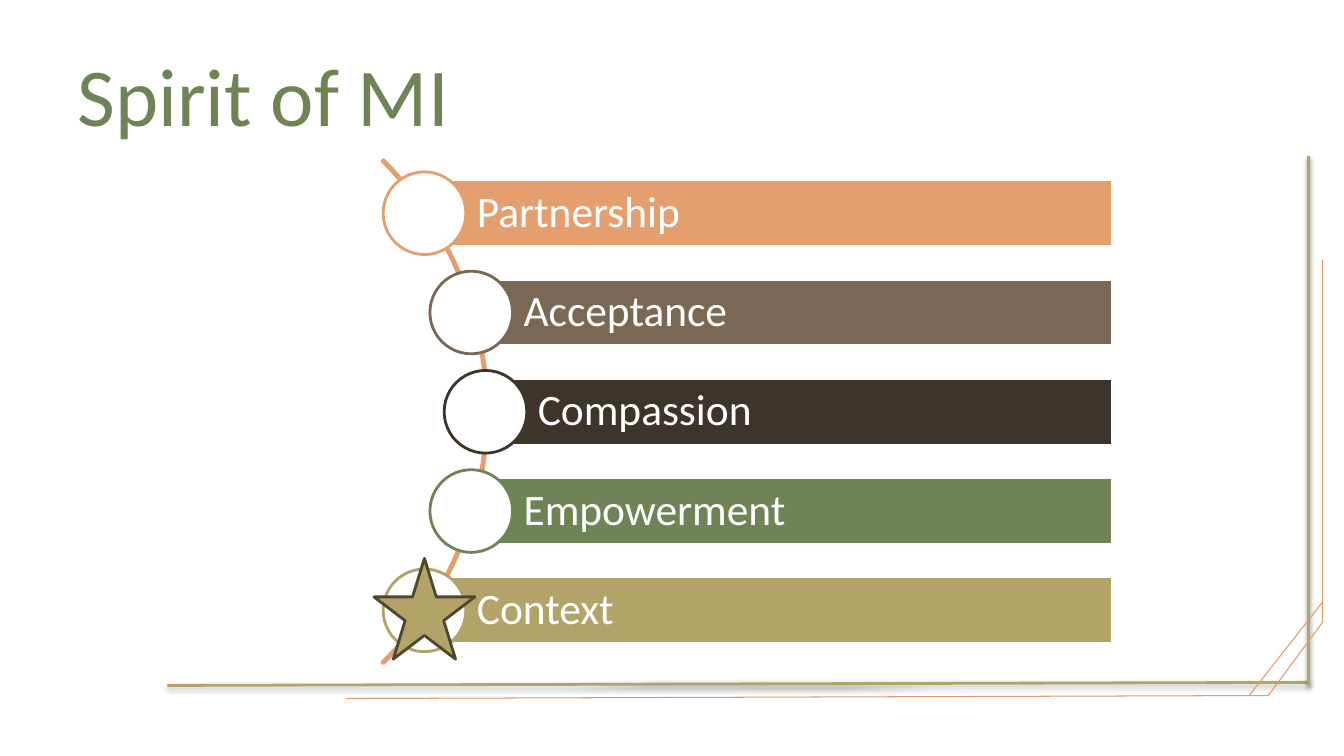
from dataclasses import dataclass
from math import sqrt

from lxml.etree import SubElement
from pptx import Presentation
from pptx.dml.color import RGBColor
from pptx.enum.shapes import MSO_CONNECTOR, MSO_SHAPE
from pptx.enum.text import MSO_ANCHOR, PP_ALIGN
from pptx.oxml.ns import qn
from pptx.util import Inches, Pt


@dataclass(frozen=True)
class Theme:
    font: str = "Calibri"
    title_size: float = 58.7
    label_size: float = 31
    outline: float = 2
    hairline: float = 0.75
    white: str = "FFFFFF"
    orange: str = "E59E6D"
    frame_orange: str = "E39A68"
    brown: str = "7A6855"
    dark: str = "3D342A"
    green: str = "6F8456"
    gold: str = "B3A369"
    star_edge: str = "4E472E"


theme = Theme()


def add_outlined(kind, left, top, width, height, fill, edge):
    shape = page.shapes.add_shape(kind, Inches(left), Inches(top), Inches(width), Inches(height))
    shape.shadow.inherit = False
    if fill:
        shape.fill.solid()
        shape.fill.fore_color.rgb = RGBColor.from_string(fill)
    else:
        shape.fill.background()
    shape.line.color.rgb = RGBColor.from_string(edge)
    shape.line.width = Pt(theme.outline)
    return shape


def add_span(para, text, size, color):
    span = para.add_run()
    span.text = text
    span.font.name = theme.font
    span.font.size = Pt(size)
    span.font.color.rgb = RGBColor.from_string(color)


deck = Presentation()
deck.slide_width = Inches(13.33)
deck.slide_height = Inches(7.5)
page = deck.slides.add_slide(deck.slide_layouts[5])

# Frame in the lower right corner: gold lines cast a shadow, orange ones do not
gold_lines = [(1.66, 6.8, 12.98, 6.77), (12.98, 1.55, 12.98, 6.8)]
orange_lines = [
    (13.12, 6.17, 12.58, 6.9),
    (13.12, 5.97, 12.39, 6.9),
    (12.58, 6.9, 3.43, 6.93),
    (13.12, 6.17, 13.12, 2.58),
]
for ends in gold_lines + orange_lines:
    is_gold = ends in gold_lines
    rule = page.shapes.add_connector(MSO_CONNECTOR.STRAIGHT, *map(Inches, ends))
    rule.line.color.rgb = RGBColor.from_string(theme.gold if is_gold else theme.frame_orange)
    rule.line.width = Pt(theme.outline if is_gold else theme.hairline)
    effects = SubElement(rule._element.spPr, qn("a:effectLst"))
    if is_gold:
        shadow = SubElement(effects, qn("a:outerShdw"), blurRad=str(Pt(3.1)),
                            dist=str(Pt(1.6)), dir="5400000", rotWithShape="0")
        shade = SubElement(shadow, qn("a:srgbClr"), val="000000")
        SubElement(shade, qn("a:alpha"), val="38000")

# Arc that carries the circles
arc_left, arc_top, arc_size = -2.23, 0.55, 7.07
arc = add_outlined(MSO_SHAPE.BLOCK_ARC, arc_left, arc_top, arc_size, arc_size, None, theme.orange)
for index, value in enumerate((189, 27, 0.003)):
    arc.adjustments[index] = value

# Each bar starts at the centre of its circle, which lies on the arc
center_x = arc_left + arc_size / 2
center_y = arc_top + arc_size / 2
track_radius = 3.51
row_pitch = 0.985
bar_right, bar_height, circle_size = 11.03, 0.66, 0.82
rows = [
    ("Partnership", theme.orange),
    ("Acceptance", theme.brown),
    ("Compassion", theme.dark),
    ("Empowerment", theme.green),
    ("Context", theme.gold),
]
for index, (label, color) in enumerate(rows):
    offset = (index - 2) * row_pitch
    x = center_x + sqrt(track_radius ** 2 - offset ** 2)
    y = center_y + offset
    bar = add_outlined(MSO_SHAPE.RECTANGLE, x, y - bar_height / 2,
                       bar_right - x, bar_height, color, theme.white)
    frame = bar.text_frame
    frame.word_wrap = True
    frame.vertical_anchor = MSO_ANCHOR.MIDDLE
    frame.margin_left = Inches(0.52)
    frame.margin_top = frame.margin_right = frame.margin_bottom = Inches(0.09)
    para = frame.paragraphs[0]
    para.alignment = PP_ALIGN.LEFT
    para.line_spacing = 0.9
    add_span(para, label, theme.label_size, theme.white)
    add_outlined(MSO_SHAPE.OVAL, x - circle_size / 2, y - circle_size / 2,
                 circle_size, circle_size, theme.white, color)

title = page.shapes.title
title.left, title.top, title.width, title.height = map(Inches, (0.67, 0.3, 12, 1.25))
title.text_frame.vertical_anchor = MSO_ANCHOR.MIDDLE
title_para = title.text_frame.paragraphs[0]
title_para.alignment = PP_ALIGN.LEFT
add_span(title_para, "Spirit of MI", theme.title_size, theme.green)

add_outlined(MSO_SHAPE.STAR_5_POINT, 3.71, 5.54, 1, 1, theme.gold, theme.star_edge)

deck.save("out.pptx")
